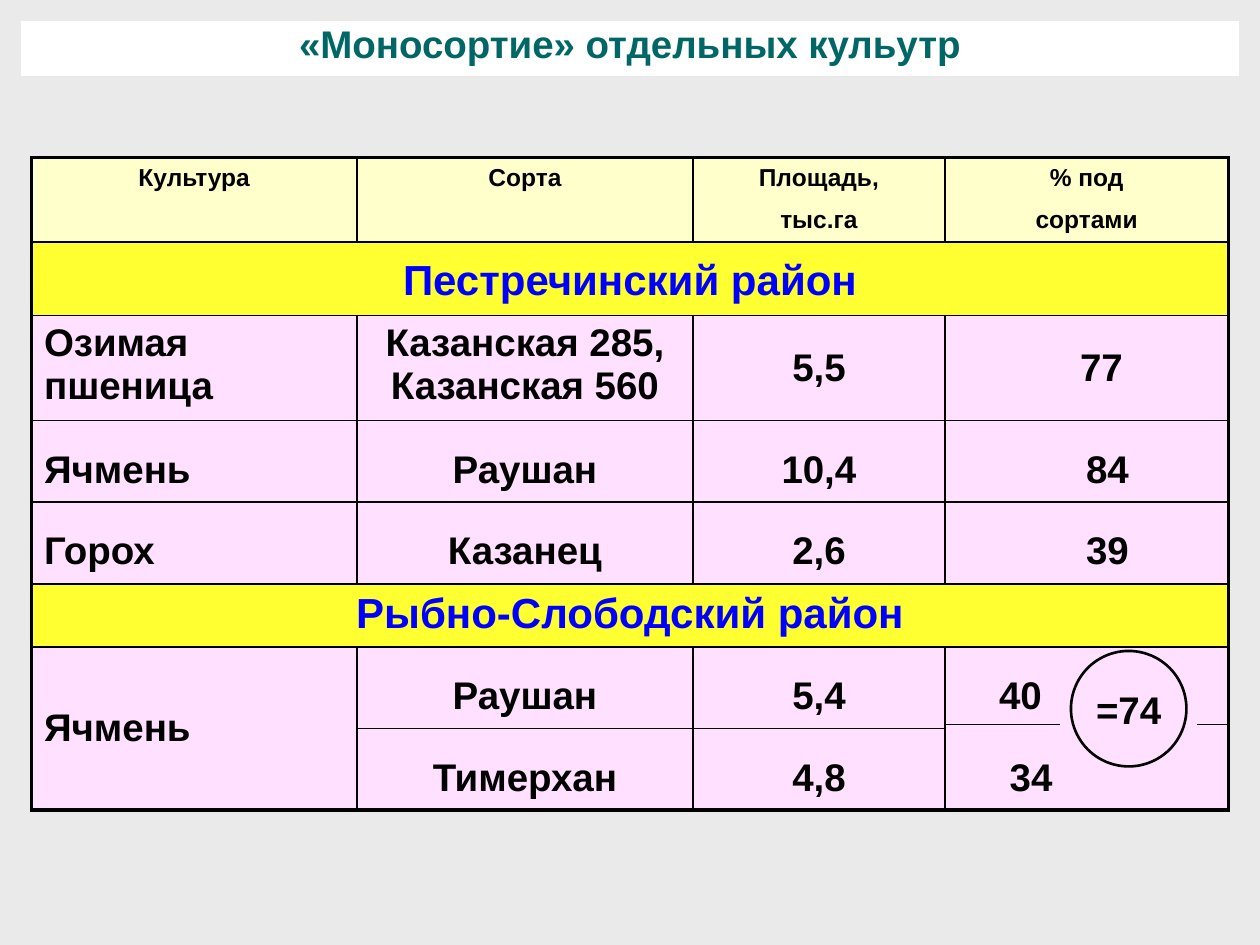
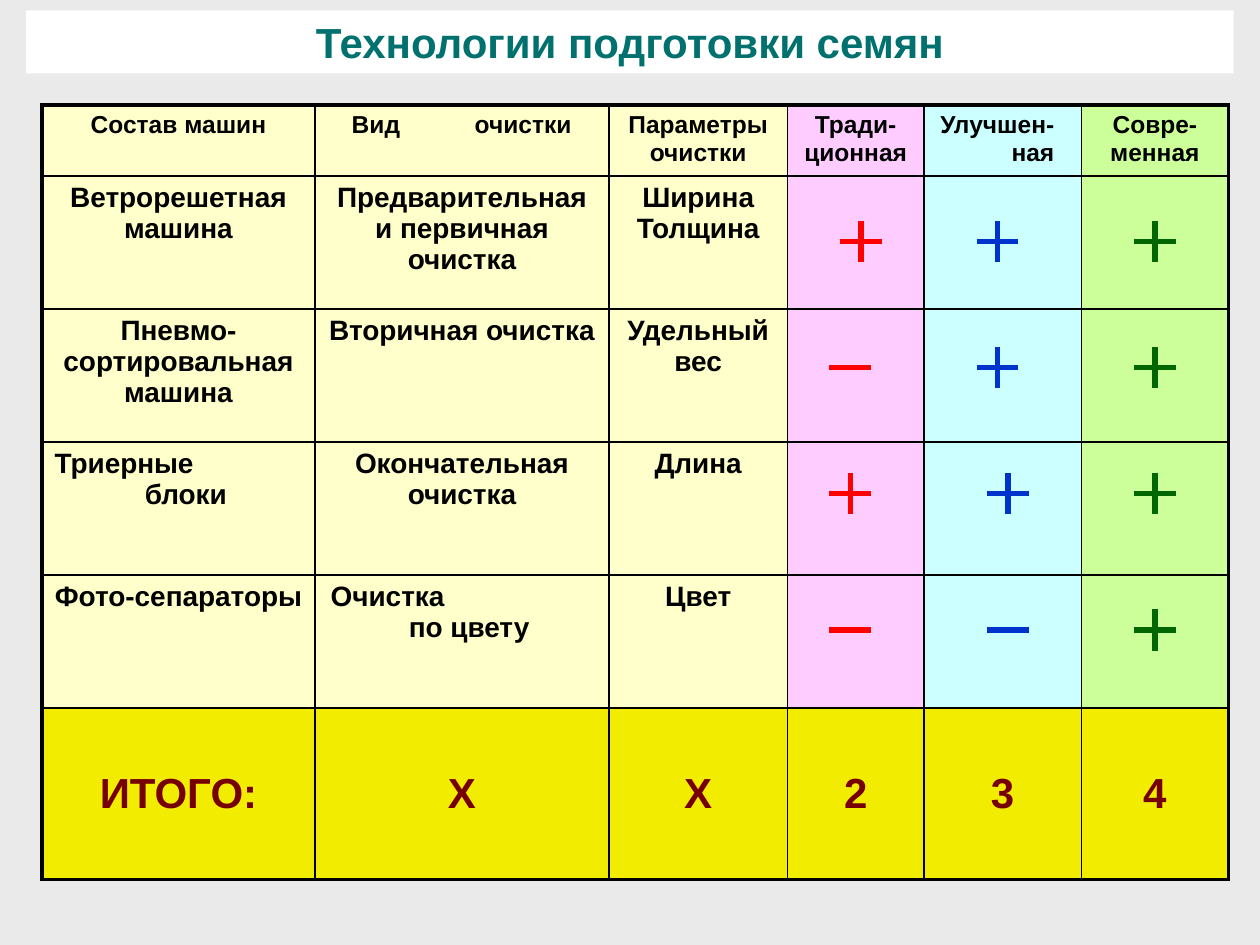
"""Build two slides on crop variety shares and seed preparation technologies."""
from copy import deepcopy
from dataclasses import dataclass

from lxml import etree
from pptx import Presentation
from pptx.dml.color import RGBColor
from pptx.enum.shapes import MSO_CONNECTOR, MSO_SHAPE
from pptx.enum.text import MSO_ANCHOR, PP_ALIGN
from pptx.oxml.ns import qn
from pptx.util import Pt

LEFT, CENTER, RIGHT = PP_ALIGN.LEFT, PP_ALIGN.CENTER, PP_ALIGN.RIGHT
TOP, MIDDLE = MSO_ANCHOR.TOP, MSO_ANCHOR.MIDDLE
RECT, OVAL = MSO_SHAPE.RECTANGLE, MSO_SHAPE.OVAL
STRAIGHT = MSO_CONNECTOR.STRAIGHT


@dataclass(frozen=True)
class Theme:
    """Colours, font and sizes in points."""
    font: str = "Arial"
    back: str = "EAEAEA"
    white: str = "FFFFFF"
    black: str = "000000"
    title: str = "006666"
    title_alt: str = "00716E"
    cream: str = "FFFFCC"
    yellow: str = "FFFF31"
    gold: str = "F2EC00"
    rose: str = "FFE1FF"
    pink: str = "FFCCFF"
    aqua: str = "CCFFFF"
    lime: str = "CCFF99"
    blue: str = "0000FF"
    maroon: str = "760000"
    small: int = 14
    text: int = 16
    large: int = 22
    huge: int = 24
    inner: float = 1
    outer: float = 2.25
    inset: float = 7.2


T = Theme()
MACHINE_FILLS = [T.cream] * 3 + [T.pink, T.aqua, T.lime]

STYLES = {
    "title": dict(fills=[T.white], size=T.large, color=T.title, spacing=0.9),
    "head": dict(fills=[T.cream] * 4, size=T.small),
    "district": dict(fills=[T.yellow] * 4, size=T.huge, color=T.blue),
    "wide_district": dict(fills=[T.yellow] * 4, size=T.huge, color=T.blue, spacing=1.2),
    "crop": dict(fills=[T.rose] * 4, size=T.large),
    "wide_crop": dict(fills=[T.rose] * 4, size=T.large, spacing=1.5),
    "machine_head": dict(fills=MACHINE_FILLS, size=T.small),
    "machine": dict(fills=MACHINE_FILLS, size=T.text),
    "total": dict(fills=[T.gold] * 6, size=T.huge, color=T.maroon, anchor=MIDDLE),
}

VARIETY_TITLE = dict(
    at=(12, 12), cols=[696], edge=0,
    rows=[(31.4, "title", ["«Моносортие» отдельных кульутр"])],
)
VARIETIES = dict(
    at=(18, 90), cols=[186, 192, 144, 162], edge=T.outer,
    rows=[
        (24, "head", ["Культура", "Сорта", "Площадь,", "% под"]),
        (24, "head", ["", "", "тыс.га", "сортами"]),
        (42, "wide_district", ["Пестречинский район", "", "", ""]),
        (60, "crop", ["Озимая\nпшеница", "Казанская 285, Казанская 560", "5,5", "77"]),
        (46.7, "wide_crop", ["Ячмень", "Раушан", "10,4", "84"]),
        (46.7, "wide_crop", ["Горох", "Казанец", "2,6", "39"]),
        (36, "district", ["Рыбно-Слободский район", "", "", ""]),
        (46.7, "wide_crop", ["Ячмень", "Раушан", "5,4", "40"]),
        (46.7, "wide_crop", ["", "Тимерхан", "4,8", "34"]),
    ],
    merges=[((2, 0), (2, 3)), ((6, 0), (6, 3)), ((7, 0), (8, 0))],
    open_below=[(0, 0), (0, 1), (0, 2), (0, 3), (7, 3)],
    tweaks={
        (3, 0): dict(align=LEFT),
        (3, 2): dict(anchor=MIDDLE),
        (3, 3): dict(anchor=MIDDLE, left=24),
        (4, 0): dict(align=LEFT),
        (4, 3): dict(left=31),
        (5, 0): dict(align=LEFT),
        (5, 3): dict(left=31),
        (7, 0): dict(align=LEFT, anchor=MIDDLE, spacing=1),
        (7, 3): dict(align=LEFT, left=31),
        (8, 3): dict(align=LEFT, left=37),
    },
)
SUM_TEXT, SUM_BOX = "=74", (612, 372, 66, 66)
SUM_LINE_Y, SUM_LINES = 414, [(540, 606), (684, 702)]

MACHINE_TITLE, MACHINE_TITLE_BOX = "Технологии подготовки семян", (15, 6, 690, 36)
MACHINES = dict(
    at=(24, 60), cols=[156, 168, 102, 78, 90, 84], edge=T.outer,
    rows=[
        (40.5, "machine_head", ["Состав машин", "Вид\tочистки", "Параметры очистки",
                                "Тради-ционная", "Улучшен-\nная", "Совре-менная"]),
        (76, "machine", ["Ветрорешетная машина", "Предварительная и первичная очистка",
                         "Ширина Толщина", "", "", ""]),
        (76, "machine", ["Пневмо-сортировальная машина", "Вторичная очистка",
                         "Удельный\nвес", "", "", ""]),
        (76, "machine", ["Триерные\n\tблоки", "Окончательная очистка", "Длина", "", "", ""]),
        (76, "machine", ["Фото-сепараторы", "Очистка\n\tпо цвету", "Цвет", "", "", ""]),
        (98, "total", ["ИТОГО:", "Х", "Х", "2", "3", "4"]),
    ],
    tweaks={
        (0, 1): dict(align=LEFT, left=21, tab=70.3),
        (0, 4): dict(align=RIGHT, right=15.5),
        (3, 0): dict(align=LEFT, tab=51.5),
        (4, 1): dict(align=LEFT, left=9, tab=44.6),
    },
)
MARK_COLORS = ["FF0000", "0033CC", "006600"]
MARK_SIZE = 24
MARKS = [
    (138, "+++", (492, 570, 660)),
    (210, "-++", (486, 570, 660)),
    (282, "+++", (486, 576, 660)),
    (360, "--+", (486, 576, 660)),
]


def rgb(value):
    return RGBColor.from_string(value)


def add_text(p, text, size, color=T.black, align=CENTER):
    p.alignment = align
    if not text:
        p._p.get_or_add_endParaRPr().set("sz", str(size * 100))
        return
    for i, line in enumerate(text.split("\n")):
        if i:
            p.add_line_break()
            p._p[-1].append(deepcopy(r._r.get_or_add_rPr()))
        r = p.add_run()
        r.text = line
        r.font.name, r.font.size, r.font.bold = T.font, Pt(size), True
        r.font.color.rgb = rgb(color)


def add_border(cell, side, width):
    ln = etree.SubElement(cell._tc.get_or_add_tcPr(), qn(f"a:ln{side}"), w=str(Pt(width)))
    if width:
        fill = etree.SubElement(ln, qn("a:solidFill"))
        etree.SubElement(fill, qn("a:srgbClr"), val=T.black)
    else:
        etree.SubElement(ln, qn("a:noFill"))


def fill_cell(cell, text, fill, size, color=T.black, spacing=1, anchor=TOP,
              align=CENTER, left=T.inset, right=T.inset, tab=None):
    cell.fill.solid()
    cell.fill.fore_color.rgb = rgb(fill)
    cell.vertical_anchor = anchor
    cell.margin_left, cell.margin_right = Pt(left), Pt(right)
    p = cell.text_frame.paragraphs[0]
    p.line_spacing = spacing
    add_text(p, text, size, color, align)
    if tab:
        tabs = etree.SubElement(p._p.get_or_add_pPr(), qn("a:tabLst"))
        etree.SubElement(tabs, qn("a:tab"), pos=str(Pt(tab)), algn="l")


def add_grid(s, at, cols, rows, edge, merges=(), open_below=(), tweaks=None):
    size = sum(cols), sum(row[0] for row in rows)
    frame = s.shapes.add_table(len(rows), len(cols), *map(Pt, at + size))
    table = frame.table
    table.first_row = table.horz_banding = False
    for col, width in zip(table.columns, cols):
        col.width = Pt(width)
    for first, last in merges:
        table.cell(*first).merge(table.cell(*last))
    for i, (height, name, texts) in enumerate(rows):
        table.rows[i].height = Pt(height)
        style = dict(STYLES[name])
        fills = style.pop("fills")
        for j, text in enumerate(texts):
            cell = table.cell(i, j)
            if cell.is_spanned:
                continue
            end_i = i + (cell.span_height if cell.is_merge_origin else 1)
            end_j = j + (cell.span_width if cell.is_merge_origin else 1)
            add_border(cell, "L", T.inner if j else edge)
            add_border(cell, "R", T.inner if end_j < len(cols) else edge)
            above_open = (i - 1, j) in open_below
            add_border(cell, "T", 0 if above_open else T.inner if i else edge)
            below = T.inner if end_i < len(rows) else edge
            add_border(cell, "B", 0 if (i, j) in open_below else below)
            fill_cell(cell, text, fills[j], **{**style, **(tweaks or {}).get((i, j), {})})


def add_label(s, kind, box, text, size, color=T.black, fill=None, line=None):
    sp = s.shapes.add_shape(kind, *map(Pt, box))
    sp.shadow.inherit = False
    if fill:
        sp.fill.solid()
        sp.fill.fore_color.rgb = rgb(fill)
    else:
        sp.fill.background()
    if line:
        sp.line.color.rgb, sp.line.width = rgb(T.black), Pt(line)
    else:
        sp.line.fill.background()
    tf = sp.text_frame
    tf.word_wrap, tf.vertical_anchor = not line, MIDDLE
    add_text(tf.paragraphs[0], text, size, color)


def add_line(s, x1, y1, x2, y2, color, width):
    ln = s.shapes.add_connector(STRAIGHT, Pt(x1), Pt(y1), Pt(x2), Pt(y2))
    ln.line.color.rgb, ln.line.width = rgb(color), Pt(width)
    etree.SubElement(ln._element.spPr, qn("a:effectLst"))


def add_mark(s, sign, x, y, color):
    half = MARK_SIZE / 2
    add_line(s, x - half, y, x + half, y, color, 3)
    if sign == "+":
        add_line(s, x, y - half, x, y + half, color, 3)


def new_slide(prs):
    s = prs.slides.add_slide(prs.slide_layouts[6])
    s.background.fill.solid()
    s.background.fill.fore_color.rgb = rgb(T.back)
    return s


def main():
    prs = Presentation()
    prs.slide_width, prs.slide_height = Pt(720), Pt(540)

    s = new_slide(prs)
    add_grid(s, **VARIETY_TITLE)
    add_grid(s, **VARIETIES)
    add_label(s, OVAL, SUM_BOX, SUM_TEXT, T.large, line=1.5)
    for x1, x2 in SUM_LINES:
        add_line(s, x1, SUM_LINE_Y, x2, SUM_LINE_Y, T.black, 0.75)

    s = new_slide(prs)
    add_label(s, RECT, MACHINE_TITLE_BOX, MACHINE_TITLE, T.huge, T.title_alt, fill=T.white)
    add_grid(s, **MACHINES)
    for y, signs, centers in MARKS:
        for sign, x, color in zip(signs, centers, MARK_COLORS):
            add_mark(s, sign, x, y, color)

    prs.save("out.pptx")


if __name__ == "__main__":
    main()
